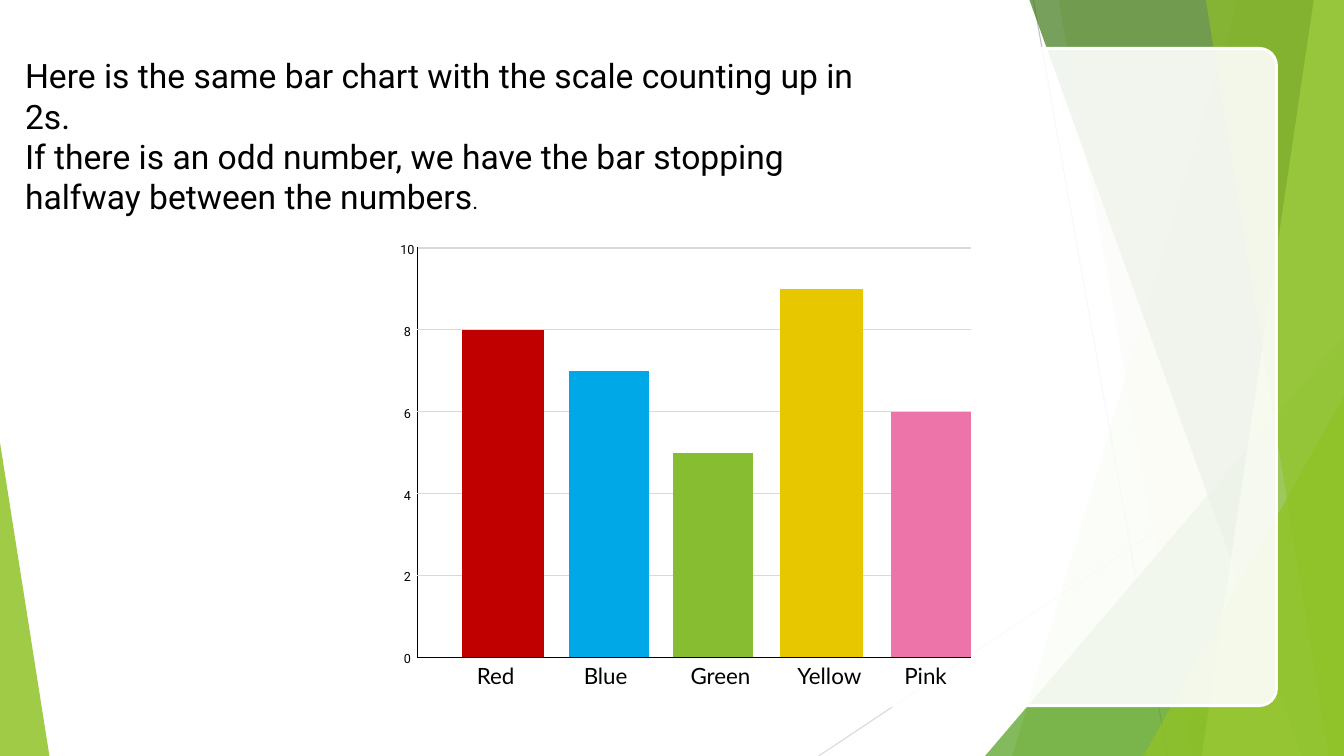
from pptx import Presentation
from pptx.dml.color import RGBColor
from pptx.enum.shapes import MSO_CONNECTOR, MSO_SHAPE
from pptx.enum.text import MSO_ANCHOR, PP_ALIGN
from pptx.oxml.ns import qn
from pptx.util import Inches, Pt
from lxml.etree import SubElement

# Content
MESSAGE = [
    [("Here is the same bar chart with the scale counting up in 2s.", 24)],
    [("If there is an odd number, we have the bar stopping halfway between the numbers", 24), (".", 16)],
]
BARS = [  # colour name, value, fill
    ("Red", 8, "C00000"),
    ("Blue", 7, "00A8E8"),
    ("Green", 5, "87BD31"),
    ("Yellow", 9, "E6C700"),
    ("Pink", 6, "ED74A9"),
]
SCALE_MAX, SCALE_STEP = 10, 2
BLACK, GRID = "000000", "D9D9D9"

# Layout, in inches
WIDTH, HEIGHT = 13.33, 7.5
ROW = 0.406
PLOT_LEFT, PLOT_TOP = 4.14, 2.46
PLOT_COLUMNS = [0.44, 0.82, 0.23, 0.8, 0.24, 0.79, 0.27, 0.82, 0.28, 0.79]
NAME_COLUMN = 1.06

# Background: ribbons run to the right edge (top x, bottom x), triangles stand on the bottom edge
# (left, width, height, apex share); each ends with colour and opacity
BACKDROP = [
    ("ribbon", (12.28, 10.04), "90C226", 30),
    ("ribbon", (10.5, 11.83), "90C226", 20),
    ("triangle", (9.77, 3.56, 4.17, 1), "54A021", 72),
    ("ribbon", (10.21, 12.91), "3F7819", 70),
    ("ribbon", (13.03, 11.92), "C0E474", 70),
    ("ribbon", (11.96, 13.18), "90C226", 65),
    ("triangle", (11.34, 1.99, 3.57, 1), "90C226", 80),
    ("triangle", (0, 0.49, 3.11, 0), "90C226", 85),
]
HAIRLINES = [((10.25, 0), (11.58, HEIGHT), "BFBFBF"), ((WIDTH, 4.03), (8.12, HEIGHT), "D9D9D9")]
NO_STYLE = "{2D5ABB26-0587-4C30-8999-92F81FD0307C}"


def colour(hex_code):
    return RGBColor.from_string(hex_code)


def paint(shape, hex_code, opacity):
    shape.shadow.inherit = False
    shape.fill.solid()
    shape.fill.fore_color.rgb = colour(hex_code)
    shape.line.fill.background()
    tint = next(shape._element.spPr.iter(qn("a:srgbClr")))
    SubElement(tint, qn("a:alpha"), val=str(opacity * 1000))


def write(para, text, size, font):
    span = para.add_run()
    span.text = text
    span.font.size = Pt(size)
    span.font.name = font
    span.font.color.rgb = colour(BLACK)


def plain_table(page, left, top, columns, row_count):
    frame = page.shapes.add_table(row_count, len(columns), Inches(left), Inches(top),
                                  Inches(sum(columns)), Inches(ROW * row_count))
    table = frame.table
    table.first_row = table.horz_banding = False
    table._tbl.tblPr.find(qn("a:tableStyleId")).text = NO_STYLE
    for column, width in zip(table.columns, columns):
        column.width = Inches(width)
    for row in table.rows:
        row.height = Inches(ROW)
    for cell in table.iter_cells():
        cell.fill.background()
        cell.vertical_anchor = MSO_ANCHOR.TOP
        cell.margin_bottom = 0
    return table


def edge(cell, side, hex_code):
    properties = cell._tc.get_or_add_tcPr()
    line = SubElement(properties, qn("a:ln" + side), w=str(Pt(1)))
    fill = SubElement(line, qn("a:solidFill"))
    SubElement(fill, qn("a:srgbClr"), val=hex_code)
    # Borders must stand before the cell's fill
    properties.insert(len(properties.findall(qn("a:lnL")) + properties.findall(qn("a:lnT"))
                          + properties.findall(qn("a:lnB"))) - 1, line)


def draw_backdrop(page):
    for start, end, hex_code in HAIRLINES:
        line = page.shapes.add_connector(MSO_CONNECTOR.STRAIGHT, *(Inches(n) for n in start + end))
        line.line.color.rgb = colour(hex_code)
        line.line.width = Pt(0.75)
        SubElement(line._element.spPr, qn("a:effectLst"))
    for kind, place, hex_code, opacity in BACKDROP:
        if kind == "ribbon":
            top_x, bottom_x = place
            builder = page.shapes.build_freeform(Inches(top_x), 0)
            corners = [(WIDTH, 0), (WIDTH, HEIGHT), (bottom_x, HEIGHT)]
            builder.add_line_segments([(Inches(x), Inches(y)) for x, y in corners], close=True)
            shape = builder.convert_to_shape()
        else:
            left, width, height, apex = place
            shape = page.shapes.add_shape(MSO_SHAPE.ISOSCELES_TRIANGLE, Inches(left),
                                          Inches(HEIGHT - height), Inches(width), Inches(height))
            shape.adjustments[0] = apex
        paint(shape, hex_code, opacity)
    panel = page.shapes.add_shape(MSO_SHAPE.ROUNDED_RECTANGLE, Inches(0.67), Inches(0.48),
                                  Inches(11.99), Inches(6.52))
    panel.adjustments[0] = 0.026
    paint(panel, "FFFFFF", 90)
    panel.line.color.rgb = colour("FFFFFF")
    panel.line.width = Pt(2)


def draw_plot(page):
    plot = plain_table(page, PLOT_LEFT, PLOT_TOP, PLOT_COLUMNS, SCALE_MAX)
    for row in range(SCALE_MAX):
        for column in range(len(PLOT_COLUMNS)):
            cell = plot.cell(row, column)
            cell.margin_top = 0
            # Odd columns hold bars, even columns are gaps
            name, value, fill = BARS[column // 2]
            in_bar = column % 2 == 1 and row >= SCALE_MAX - value
            if column == 0:
                edge(cell, "L", BLACK)
            if row == 0:
                edge(cell, "T", GRID)
            if row == SCALE_MAX - 1:
                edge(cell, "B", BLACK)
            elif (row + 1) % SCALE_STEP == 0 and not in_bar:
                edge(cell, "B", GRID)
            if in_bar:
                cell.fill.solid()
                cell.fill.fore_color.rgb = colour(fill)


def draw_labels(page):
    # Scale, from the top down
    scale = plain_table(page, 3.84, 2.36, [0.4], SCALE_MAX + 1)
    for row in range(0, SCALE_MAX + 1, SCALE_STEP):
        para = scale.cell(row, 0).text_frame.paragraphs[0]
        para.alignment = PP_ALIGN.CENTER
        write(para, str(SCALE_MAX - row), 9, "Roboto")
    # Names under the bars
    names = plain_table(page, 4.63, PLOT_TOP + SCALE_MAX * ROW, [NAME_COLUMN] * len(BARS), 1)
    for column, (name, value, fill) in enumerate(BARS):
        write(names.cell(0, column).text_frame.paragraphs[0], name, 16, "Lato")


def draw_message(page):
    box = page.shapes.add_textbox(Inches(0.15), Inches(0.5), Inches(8.58), Inches(1.72))
    frame = box.text_frame
    frame.word_wrap = True
    for index, spans in enumerate(MESSAGE):
        para = frame.add_paragraph() if index else frame.paragraphs[0]
        for text, size in spans:
            write(para, text, size, "Roboto")


def main():
    deck = Presentation()
    deck.slide_width, deck.slide_height = Inches(WIDTH), Inches(HEIGHT)
    page = deck.slides.add_slide(deck.slide_layouts[6])
    draw_backdrop(page)
    draw_plot(page)
    draw_labels(page)
    draw_message(page)
    deck.save("out.pptx")


if __name__ == "__main__":
    main()
